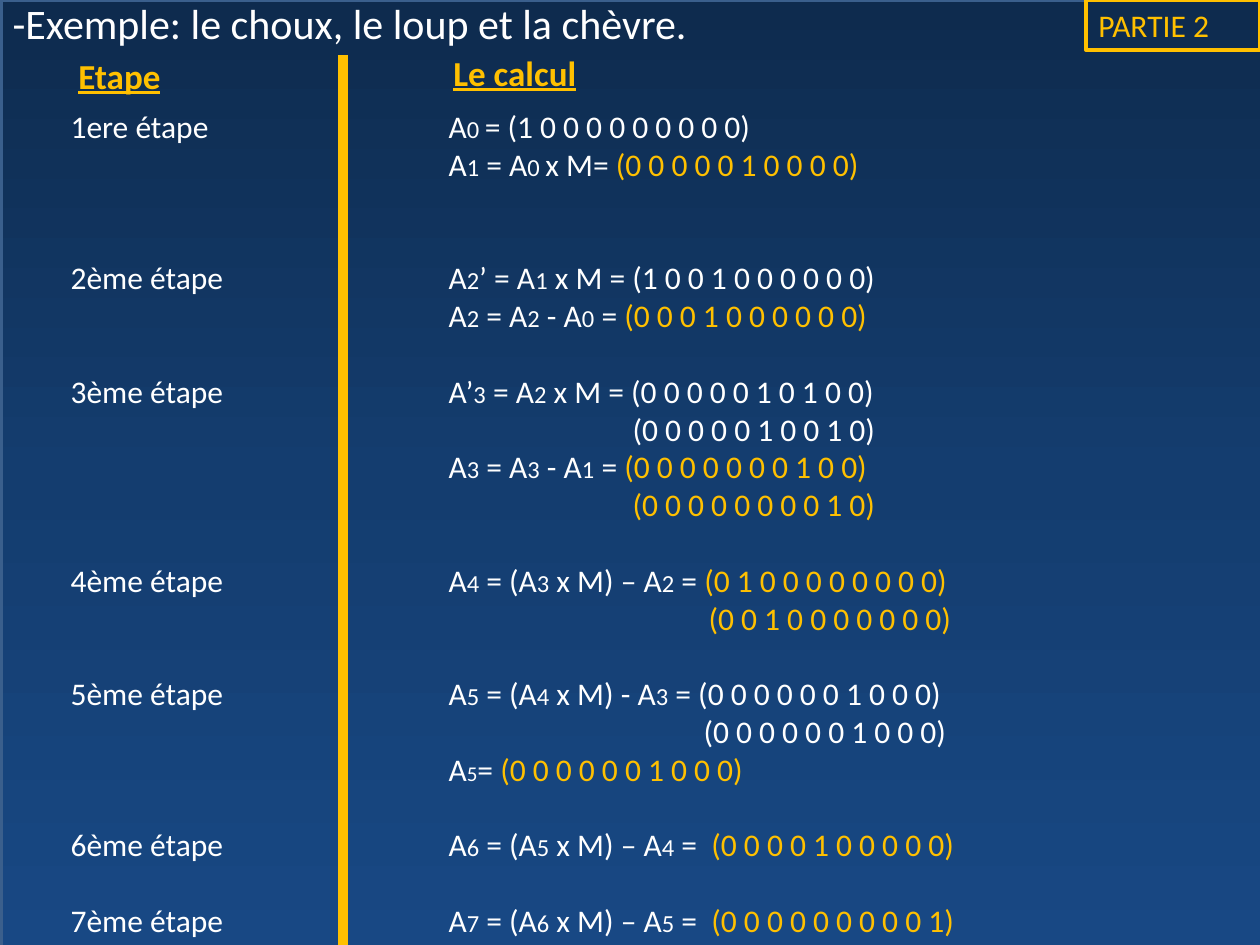
from copy import deepcopy
from dataclasses import dataclass

from lxml import etree
from pptx import Presentation
from pptx import util as u
from pptx.dml.color import RGBColor
from pptx.enum import shapes, text
from pptx.oxml.ns import qn


@dataclass(frozen=True)
class Theme:
    font: str = "Calibri"
    white: str = "FFFFFF"
    gold: str = "FFC000"
    edge: str = "3A5F8C"
    gradient: tuple = ((0, "0E2B4E"), (0.5, "143D6F"), (1, "184884"))
    title: int = 24
    heading: int = 20
    body: int = 18
    index: int = 14
    small_index: int = 12
    line: float = 21.6


@dataclass(frozen=True)
class Row:
    step: str
    calc: str
    gold: str = ""
    gap: int = 0
    indent: int = 378
    index: int = Theme.index


ROWS = (
    Row("1ere étape", "A|0 |= (1 0 0 0 0 0 0 0 0 0)"),
    Row("", "A|1| = A|0 |x M= ", "(0 0 0 0 0 1 0 0 0 0)"),
    Row("2ème étape", "A|2|’ = A|1| x M = (1 0 0 1 0 0 0 0 0 0)", gap=2),
    Row("", "A|2| = A|2| - A|0| = ", "(0 0 0 1 0 0 0 0 0 0)"),
    Row("3ème étape", "A’|3| = A|2| x M = (0 0 0 0 0 1 0 1 0 0)", gap=1),
    Row("", "(0 0 0 0 0 1 0 0 1 0)", indent=562),
    Row("", "A|3| = A|3| - A|1| = ", "(0 0 0 0 0 0 0 1 0 0)"),
    Row("", "", "(0 0 0 0 0 0 0 0 1 0)", indent=562),
    Row("4ème étape", "A|4| = (A|3| x M) – A|2| = ", "(0 1 0 0 0 0 0 0 0 0)", gap=1),
    Row("", "", "(0 0 1 0 0 0 0 0 0 0)", indent=638),
    Row("5ème étape", "A|5| = (A|4| x M) - A|3| = (0 0 0 0 0 0 1 0 0 0)", gap=1),
    Row("", "(0 0 0 0 0 0 1 0 0 0)", indent=633),
    Row("", "A|5|= ", "(0 0 0 0 0 0 1 0 0 0)", index=Theme.small_index),
    Row("6ème étape", "A|6| = (A|5| x M) – A|4| =  ", "(0 0 0 0 1 0 0 0 0 0)", gap=1),
    Row("7ème étape", "A|7| = (A|6| x M) – A|5| =  ", "(0 0 0 0 0 0 0 0 0 1)", gap=1),
)


def px(n):
    return u.Emu(round(n * 914400 / 126))


def rgb(value):
    return RGBColor.from_string(value)


class Deck:
    def __init__(self, theme):
        self.theme = theme
        self.prs = Presentation()
        self.prs.slide_width, self.prs.slide_height = px(1260), px(945)
        self.s = self.prs.slides.add_slide(self.prs.slide_layouts[1])

    def place(self, sp, x, y, w, h):
        sp.left, sp.top, sp.width, sp.height = px(x), px(y), px(w), px(h)

    def frame(self, sp, wrap=True):
        tf = sp.text_frame
        tf.word_wrap = wrap
        tf.auto_size = text.MSO_AUTO_SIZE.NONE
        tf.vertical_anchor = text.MSO_ANCHOR.TOP
        tf.paragraphs[0].alignment = text.PP_ALIGN.LEFT
        return tf

    def run(self, p, content, size, color, heading=False):
        r = p.add_run()
        r.text = content
        r.font.name, r.font.size = self.theme.font, u.Pt(size)
        r.font.color.rgb = rgb(color)
        r.font.bold = r.font.underline = heading

    def rect(self, x, y, w, h, color, width):
        sp = self.s.shapes.add_shape(shapes.MSO_SHAPE.RECTANGLE, px(x), px(y), px(w), px(h))
        sp.shadow.inherit = False
        sp.line.color.rgb, sp.line.width = rgb(color), u.Pt(width)
        return sp

    def backdrop(self, x, y, w, h):
        sp = self.rect(x, y, w, h, self.theme.edge, 2)
        sp.fill.gradient()
        sp.fill.gradient_angle = 270
        stops = sp.element.find(".//" + qn("a:gsLst"))
        stops.append(deepcopy(stops[0]))
        for stop, (position, color) in zip(sp.fill.gradient_stops, self.theme.gradient):
            stop.position, stop.color.rgb = position, rgb(color)
        self.s.shapes.title.element.addprevious(sp.element)

    def title(self, content, *box):
        sp = self.s.shapes.title
        self.place(sp, *box)
        self.run(self.frame(sp).paragraphs[0], content, self.theme.title, self.theme.white)

    def heading(self, content, x, y, w, h):
        sp = self.s.shapes.add_textbox(px(x), px(y), px(w), px(h))
        p = self.frame(sp, wrap=False).paragraphs[0]
        self.run(p, content, self.theme.heading, self.theme.gold, heading=True)

    def divider(self, x, top, bottom):
        line = self.s.shapes.add_connector(shapes.MSO_CONNECTOR.STRAIGHT, px(x), px(top), px(x), px(bottom))
        line.line.color.rgb, line.line.width = rgb(self.theme.gold), u.Pt(6)
        etree.SubElement(line.element.spPr, qn("a:effectLst"))

    def badge(self, content, *box):
        sp = self.rect(*box, self.theme.gold, 2.25)
        sp.fill.background()
        self.run(self.frame(sp).paragraphs[0], content, self.theme.body, self.theme.gold)

    def steps(self, rows, *box):
        sp = self.s.placeholders[1]
        self.place(sp, *box)
        tf = self.frame(sp)
        for i, row in enumerate(rows):
            p = tf.add_paragraph() if i else tf.paragraphs[0]
            self.step(p, row)

    def step(self, p, row):
        t = self.theme
        p.alignment = text.PP_ALIGN.LEFT
        p.space_before, p.space_after = u.Pt(row.gap * t.line), u.Pt(0)
        pPr = p._p.get_or_add_pPr()
        pPr.set("marL", str(px(row.indent)))
        pPr.set("indent", str(-px(row.indent) if row.step else 0))
        etree.SubElement(pPr, qn("a:buNone"))
        if row.step:
            tabs = etree.SubElement(pPr, qn("a:tabLst"))
            etree.SubElement(tabs, qn("a:tab"), pos=str(px(row.indent)), algn="l")
            self.run(p, row.step + "\t", t.body, t.white)
        for i, part in enumerate(row.calc.split("|")):
            if part:
                self.run(p, part, row.index if i % 2 else t.body, t.white)
        if row.gold:
            self.run(p, row.gold, t.body, t.gold)


def main():
    deck = Deck(Theme())
    deck.backdrop(1, 0, 1265, 953)
    deck.title("-Exemple: le choux, le loup et la chèvre.", 0, -9, 829, 63)
    deck.heading("Le calcul", 441, 45, 150, 55)
    deck.heading("Etape", 66, 48, 108, 55)
    deck.divider(343, 55, 979)
    deck.steps(ROWS, 58, 101, 1137, 853)
    deck.badge("PARTIE 2", 1086, 0, 174, 50)
    deck.prs.save("out.pptx")


if __name__ == "__main__":
    main()
